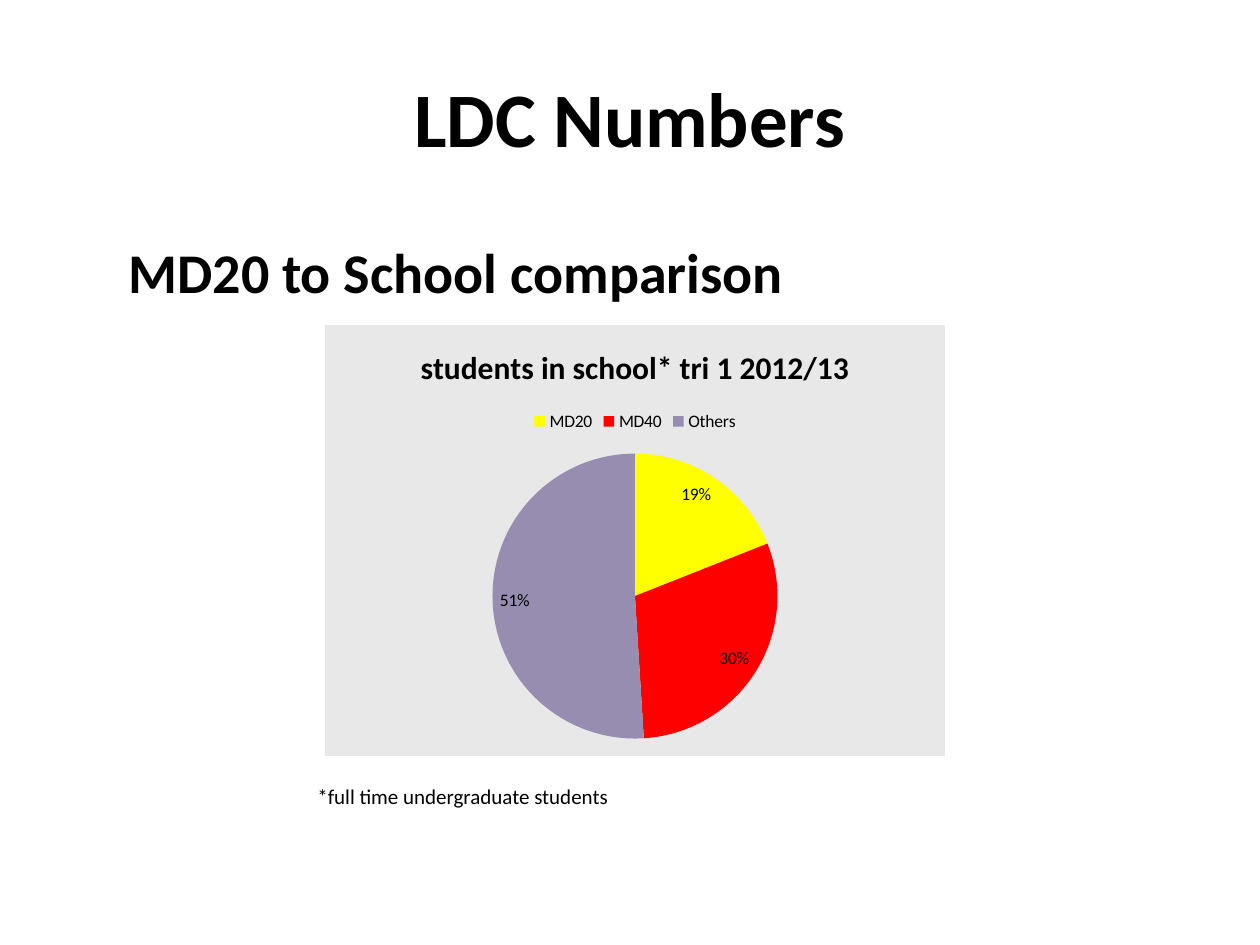
from pptx import Presentation
from pptx.chart.data import CategoryChartData
from pptx.dml.color import RGBColor
from pptx.enum.chart import XL_CHART_TYPE, XL_LABEL_POSITION, XL_LEGEND_POSITION
from pptx.enum.text import MSO_ANCHOR, PP_ALIGN
from pptx.oxml import parse_xml
from pptx.oxml.ns import nsdecls
from pptx.util import Emu, Pt

PIE = XL_CHART_TYPE.PIE
LABEL_INSIDE = XL_LABEL_POSITION.INSIDE_END
LEGEND_TOP = XL_LEGEND_POSITION.TOP
LEFT, CENTER = PP_ALIGN.LEFT, PP_ALIGN.CENTER
TOP, MIDDLE = MSO_ANCHOR.TOP, MSO_ANCHOR.MIDDLE

PX_PER_INCH = 126
BLACK, PANEL = "000000", "E8E8E8"
YELLOW, RED, LILAC = "FFFF00", "FF0000", "968DB1"


def px(length):
    return Emu(round(length * 914400 / PX_PER_INCH))


def color(hex_code):
    return RGBColor.from_string(hex_code)


class SlideBuilder:
    def __init__(self, slide, font="Calibri", ink=BLACK):
        self.slide = slide
        self.font = font
        self.ink = ink

    def style(self, font, size, bold=False):
        font.name = self.font
        font.size = Pt(size)
        font.bold = bold
        font.color.rgb = color(self.ink)

    def text(self, box, words, size, bold=False, align=LEFT, anchor=TOP):
        frame = self.slide.shapes.add_textbox(*map(px, box)).text_frame
        frame.word_wrap = True
        frame.vertical_anchor = anchor
        paragraph = frame.paragraphs[0]
        paragraph.alignment = align
        run = paragraph.add_run()
        run.text = words
        self.style(run.font, size, bold)

    def pie(self, box, title, shares, size, title_size, background):
        data = CategoryChartData()
        data.categories = [name for name, _, _ in shares]
        data.add_series("Series 1", [value for _, value, _ in shares])
        chart = self.slide.shapes.add_chart(PIE, *map(px, box), data).chart
        self.style(chart.font, size)

        # Title and legend
        chart.has_title = True
        heading = chart.chart_title.text_frame.paragraphs[0].add_run()
        heading.text = title
        self.style(heading.font, title_size, bold=True)
        chart.has_legend = True
        chart.legend.position = LEGEND_TOP
        chart.legend.include_in_layout = False
        self.style(chart.legend.font, size)

        # Slices and percentages
        plot = chart.plots[0]
        plot.vary_by_categories = True
        for index, (_, _, fill) in enumerate(shares):
            slice_format = plot.series[0].points[index].format
            slice_format.fill.solid()
            slice_format.fill.fore_color.rgb = color(fill)
            slice_format.line.fill.background()
        plot.has_data_labels = True
        labels = plot.data_labels
        labels.show_percentage = True
        labels.show_value = False
        labels.number_format = "0%"
        labels.number_format_is_linked = False
        labels.position = LABEL_INSIDE
        self.style(labels.font, size)

        # Chart background, which goes right after the c:chart element
        chart.element.chart.addnext(parse_xml(
            f'<c:spPr {nsdecls("c", "a")}><a:solidFill><a:srgbClr val="{background}"/>'
            '</a:solidFill><a:ln><a:noFill/></a:ln></c:spPr>'))


def main():
    deck = Presentation()
    deck.slide_width, deck.slide_height = px(1260), px(945)
    page = SlideBuilder(deck.slides.add_slide(deck.slide_layouts[6]))

    # Headings
    page.text((63, 38, 1134, 158), "LDC Numbers", 44, True, CENTER, MIDDLE)
    page.text((116, 231, 1081, 614), "MD20 to School comparison", 32, True)

    # Share of students
    shares = [("MD20", 19, YELLOW), ("MD40", 30, RED), ("Others", 51, LILAC)]
    page.pie((325, 325, 620, 431), "students in school* tri 1 2012/13",
             shares, size=10, title_size=18, background=PANEL)

    # Footnote
    page.text((305, 777, 599, 38), "*full time undergraduate students", 12)

    deck.save("out.pptx")


if __name__ == "__main__":
    main()
